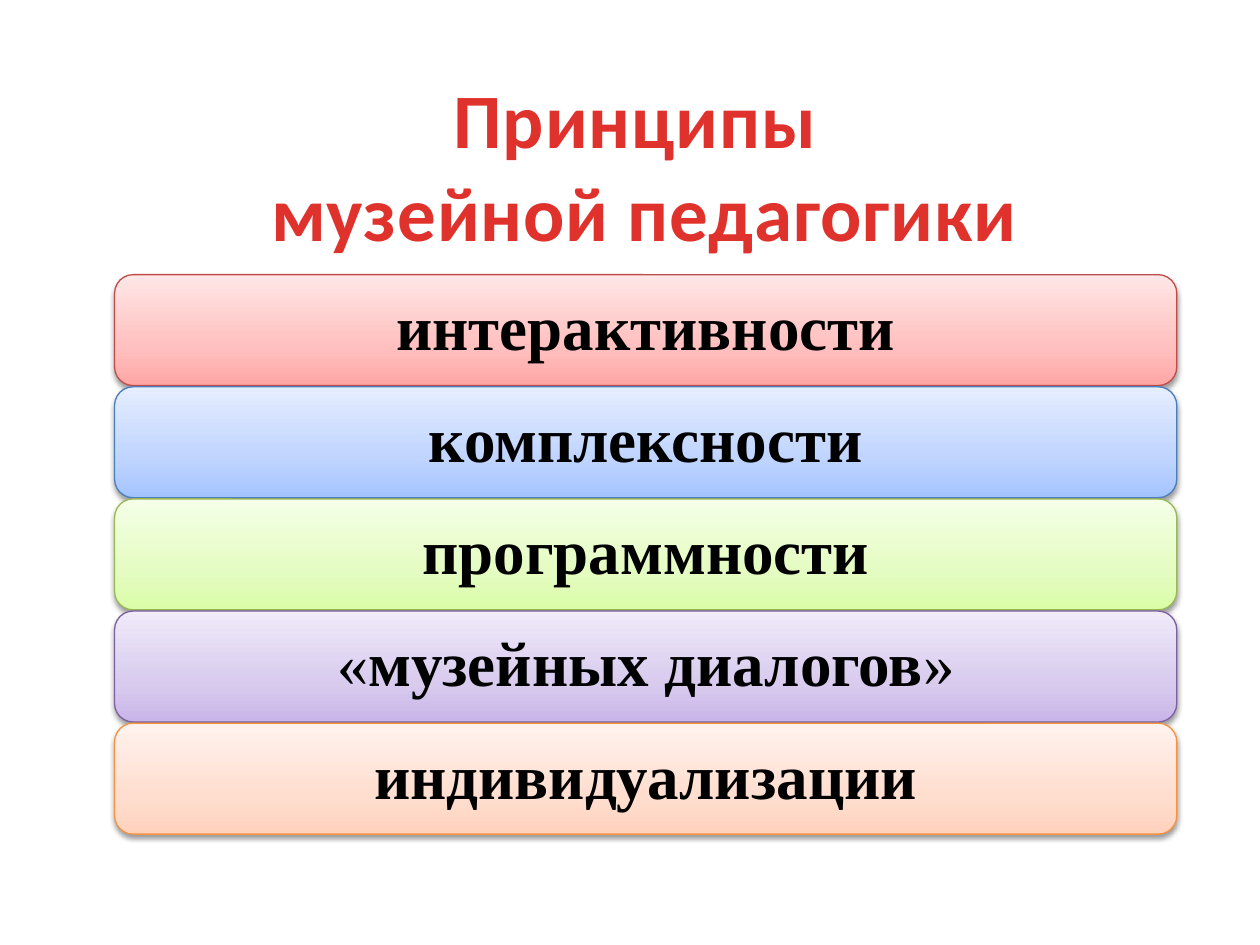
from copy import deepcopy
from dataclasses import dataclass

from lxml import etree
from pptx import Presentation
from pptx import util as u
from pptx.dml.color import RGBColor
from pptx.enum import shapes, text
from pptx.oxml.ns import qn


@dataclass(frozen=True)
class Theme:
    title_font: str = "Calibri"
    title_size: int = 44
    title_color: str = "E0322D"
    bar_font: str = "Times New Roman"
    bar_size: int = 36
    bar_color: str = "000000"
    # Each palette: outline, then gradient colours from bottom to top
    palettes: tuple = (
        ("BF4C48", "FFA6A5", "FFC0BF", "FFE7E7"),
        ("4B7EBC", "A4C4FF", "BFD4FF", "E6EEFF"),
        ("98B955", "DAFDA7", "E4FCC2", "F5FFE7"),
        ("7D60A0", "C9B5E8", "D8CBEE", "F0EAF9"),
        ("F69240", "FFD2BD", "FFDED0", "FFF2ED"),
    )
    stops: tuple = (0, 0.35, 1)


theme = Theme()


def add_span(para, words, font, size, color, bold=True):
    span = para.add_run()
    span.text = words
    span.font.name = font
    span.font.size = u.Pt(size)
    span.font.bold = bold
    span.font.color.rgb = RGBColor.from_string(color)
    return span


def style_bar(bar, outline, colors):
    """Give the bar its three-stop gradient, outline and soft shadow."""
    bar.fill.gradient()
    bar.fill.gradient_angle = 90
    stop_list = bar._element.spPr.find(".//" + qn("a:gsLst"))
    stop_list.insert(1, deepcopy(stop_list[0]))
    for stop, position, color in zip(bar.fill.gradient_stops, theme.stops, colors):
        stop.position = position
        stop.color.rgb = RGBColor.from_string(color)
    bar.line.color.rgb = RGBColor.from_string(outline)
    bar.line.width = u.Pt(0.75)

    bar.shadow.inherit = False
    effects = bar._element.spPr.find(qn("a:effectLst"))
    shadow = etree.SubElement(
        effects, qn("a:outerShdw"), blurRad=str(u.Pt(3.1)), dist=str(u.Pt(1.6)),
        dir="5400000", rotWithShape="0")
    shadow_color = etree.SubElement(shadow, qn("a:srgbClr"), val="000000")
    etree.SubElement(shadow_color, qn("a:alpha"), val="38000")


deck = Presentation()
deck.slide_width, deck.slide_height = u.Inches(10), u.Inches(7.5)
page = deck.slides.add_slide(deck.slide_layouts[5])

# Title
title = page.shapes.title
title.left, title.top = u.Inches(1.54), u.Inches(0.52)
title.width, title.height = u.Inches(7.15), u.Inches(1.58)
frame = title.text_frame
frame.word_wrap = True
frame.auto_size = text.MSO_AUTO_SIZE.NONE
frame.vertical_anchor = text.MSO_ANCHOR.TOP
for index, words in enumerate(("Принципы ", "музейной педагогики")):
    para = frame.add_paragraph() if index else frame.paragraphs[0]
    para.alignment = text.PP_ALIGN.CENTER
    span = add_span(para, words, theme.title_font, theme.title_size, theme.title_color)
    span.font._element.set("spc", "50")

# Principles: spans of (words, bold)
principles = (
    (("интерактивности", True),),
    (("комплексности", True),),
    (("программности", True),),
    (("«", False), ("музейных диалогов", True), ("»", False)),
    (("индивидуализации", True),),
)
first_top, pitch = 2.18, 0.89
for index, (spans, palette) in enumerate(zip(principles, theme.palettes)):
    bar = page.shapes.add_shape(
        shapes.MSO_SHAPE.ROUNDED_RECTANGLE, u.Inches(0.91),
        u.Inches(first_top + index * pitch), u.Inches(8.43), u.Inches(0.88))
    style_bar(bar, palette[0], palette[1:])
    frame = bar.text_frame
    frame.word_wrap = True
    frame.vertical_anchor = text.MSO_ANCHOR.MIDDLE
    frame.margin_left = frame.margin_right = u.Inches(0.15)
    frame.margin_top = frame.margin_bottom = u.Inches(0.15)
    para = frame.paragraphs[0]
    para.alignment = text.PP_ALIGN.CENTER
    para.line_spacing = 0.9
    for words, bold in spans:
        add_span(para, words, theme.bar_font, theme.bar_size, theme.bar_color, bold)

deck.save("out.pptx")
